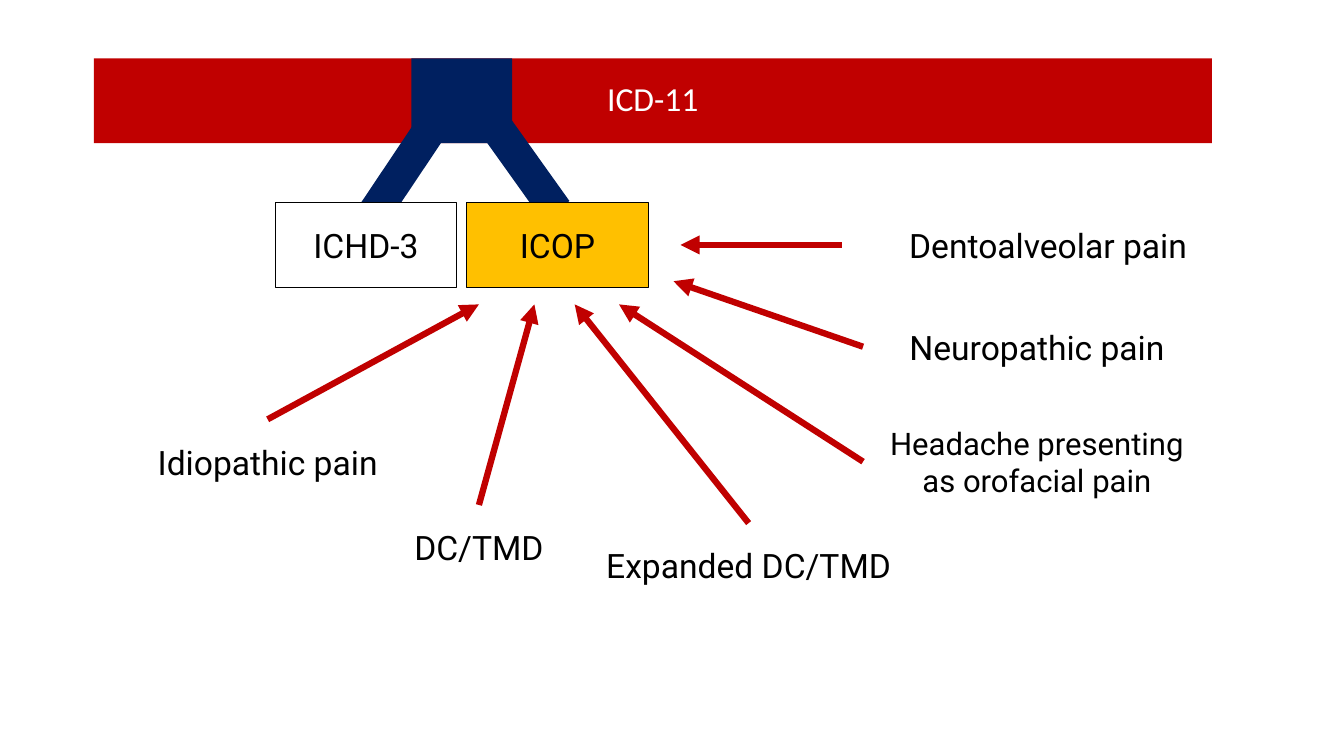
"""Builds the slide that shows which pain classifications feed into ICOP under ICD-11."""
from dataclasses import dataclass

from lxml.etree import SubElement
from pptx import Presentation
from pptx.dml.color import RGBColor
from pptx.enum.shapes import MSO_CONNECTOR, MSO_SHAPE
from pptx.enum.text import MSO_ANCHOR, MSO_AUTO_SIZE, PP_ALIGN
from pptx.oxml.ns import qn
from pptx.util import Pt

PX = 9144
TOP, LEFT = 0, 1


@dataclass(frozen=True)
class Theme:
    red: str = "C00000"
    navy: str = "002060"
    gold: str = "FFC000"
    white: str = "FFFFFF"
    black: str = "000000"
    title_font: str = "Calibri"
    body_font: str = "Roboto"
    text_size: float = 24
    small_size: float = 22.2
    outline: float = 0.75
    arrow: float = 4.5


class Deck:
    def __init__(self, theme):
        self.theme = theme
        self.prs = Presentation()
        self.prs.slide_width, self.prs.slide_height = 1333 * PX, 750 * PX
        self.s = self.prs.slides.add_slide(self.prs.slide_layouts[5])

    def emu(self, *lengths):
        return [n * PX for n in lengths]

    def fill(self, sp, color):
        sp.fill.solid()
        sp.fill.fore_color.rgb = RGBColor.from_string(color)

    def add_text(self, sp, text, size, font, color):
        tf = sp.text_frame
        tf.word_wrap = True
        tf.auto_size = MSO_AUTO_SIZE.NONE
        tf.vertical_anchor = MSO_ANCHOR.MIDDLE
        p = tf.paragraphs[0]
        p.alignment = PP_ALIGN.CENTER
        r = p.add_run()
        r.text = text
        r.font.size, r.font.name = Pt(size), font
        r.font.color.rgb = RGBColor.from_string(color)
        return p

    def body(self, sp, text, size):
        tf = sp.text_frame
        tf.margin_left = tf.margin_right = 13 * PX
        tf.margin_top = tf.margin_bottom = 7 * PX
        self.add_text(sp, text, size, self.theme.body_font, self.theme.black)

    def title(self, text, box):
        sp = self.s.shapes.title
        sp.left, sp.top, sp.width, sp.height = self.emu(*box)
        self.fill(sp, self.theme.red)
        p = self.add_text(sp, text, self.theme.text_size, self.theme.title_font, self.theme.white)
        p.line_spacing = 0.9

    def rect(self, box, color, rotation=0):
        sp = self.s.shapes.add_shape(MSO_SHAPE.RECTANGLE, *self.emu(*box))
        sp.shadow.inherit = False
        sp.rotation = rotation
        self.fill(sp, color)
        sp.line.fill.background()
        return sp

    def card(self, text, box, color):
        sp = self.rect(box, color)
        sp.line.color.rgb = RGBColor.from_string(self.theme.black)
        sp.line.width = Pt(self.theme.outline)
        self.body(sp, text, self.theme.text_size)

    def label(self, text, box, size):
        sp = self.s.shapes.add_textbox(*self.emu(*box))
        self.body(sp, text, size)
        return sp

    def arrow(self, source, site, tip):
        x, y = self.emu(*tip)
        c = self.s.shapes.add_connector(MSO_CONNECTOR.STRAIGHT, source.left, source.top, x, y)
        c.begin_connect(source, site)
        c.line.color.rgb = RGBColor.from_string(self.theme.red)
        c.line.width = Pt(self.theme.arrow)
        properties = c.element.spPr
        SubElement(properties.find(qn("a:ln")), qn("a:tailEnd"), type="triangle")
        SubElement(properties, qn("a:effectLst"))


def main():
    theme = Theme()
    deck = Deck(theme)
    height, row, tips = 84, 201, 302
    normal, small = theme.text_size, theme.small_size

    deck.title("ICD-11", (93, 58, 1109, height))
    deck.rect((400, 57, 33, 173), theme.navy, 33.8)
    deck.rect((485, 53, 33, 172), theme.navy, 324.5)
    deck.card("ICHD-3", (273, row, 180, height), theme.white)
    deck.card("ICOP", (463, row, 180, height), theme.gold)
    deck.rect((408, 58, 100, height), theme.navy)

    inputs = [
        ("Idiopathic pain", 93, 416, 345, normal, TOP, (475, tips)),
        ("DC/TMD", 385, 501, 180, normal, TOP, (530, tips)),
        ("Expanded DC/TMD", 570, 519, 345, normal, TOP, (570, tips)),
        ("Headache presenting as orofacial pain", 856, 416, 345, small, LEFT, (614, tips)),
        ("Neuropathic pain", 856, 302, 345, normal, LEFT, (668, 279)),
        ("Dentoalveolar pain", 835, row, 409, normal, LEFT, (675, row + height // 2)),
    ]
    for text, x, y, width, size, site, tip in inputs:
        deck.arrow(deck.label(text, (x, y, width, height), size), site, tip)

    deck.prs.save("out.pptx")


if __name__ == "__main__":
    main()
